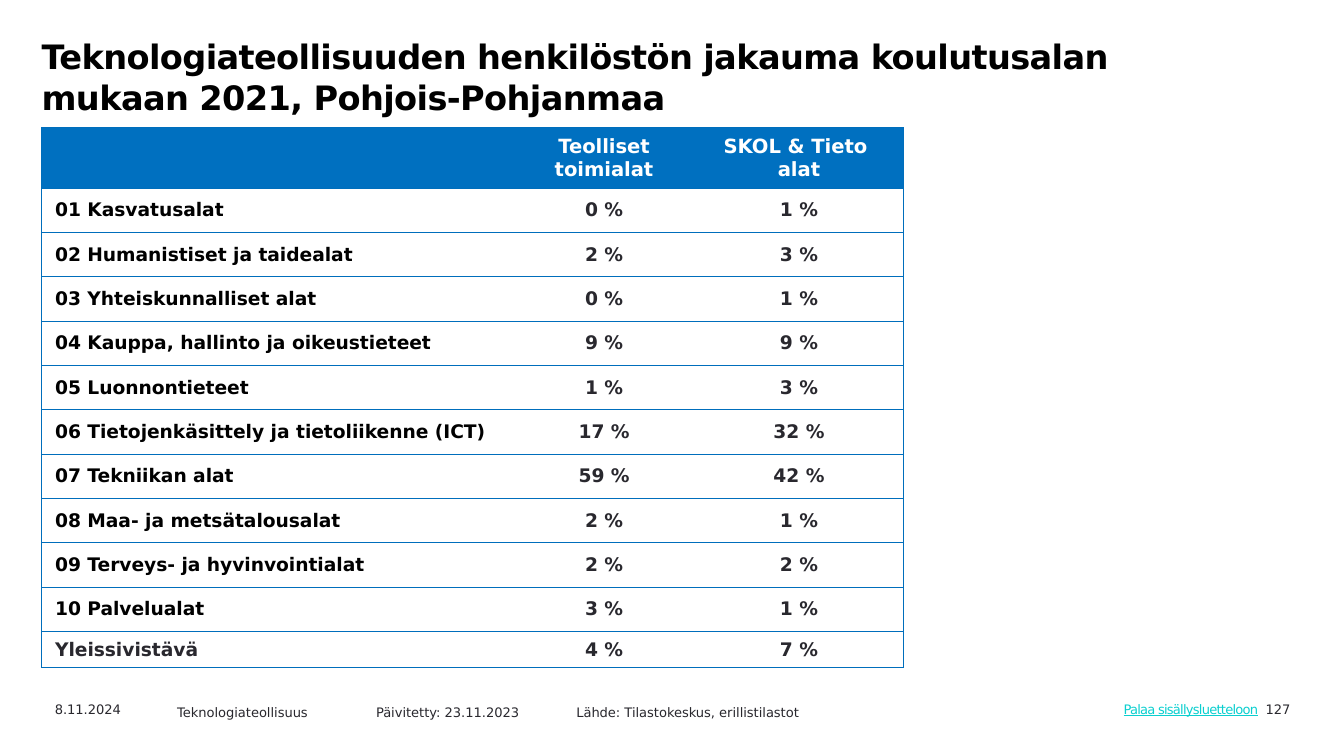
"""Build a slide with a table of staff shares by field of education."""
from dataclasses import dataclass

import pptx
import pptx.dml.color
import pptx.enum.text
import pptx.oxml
import pptx.oxml.ns
import pptx.util

COLUMNS = 1000
SLIDE_WIDTH = pptx.util.Inches(10)
SLIDE_HEIGHT = SLIDE_WIDTH * 9 // 16
UNIT = SLIDE_WIDTH // COLUMNS
ALIGN = pptx.enum.text.PP_ALIGN


@dataclass(frozen=True)
class Theme:
    font: str = "DejaVu Sans"
    ink: str = "29282E"
    black: str = "000000"
    white: str = "FFFFFF"
    header: str = "0070C0"
    border: str = "006EBC"
    link: str = "0ACFCF"
    title_size: float = 18
    header_size: float = 10.5
    body_size: float = 10
    footer_size: float = 7
    border_width: float = 0.75


@dataclass(frozen=True)
class Box:
    left: int
    top: int
    width: int
    height: int

    def emu(self) -> list[int]:
        return [v * UNIT for v in (self.left, self.top, self.width, self.height)]


@dataclass(frozen=True)
class Field:
    name: str
    industry: int
    services: int


THEME = Theme()
COLUMN_WIDTHS = (351, 135, 155)
HEADER_HEIGHT, ROW_HEIGHT, LAST_HEIGHT = 45, 33, 27
HEADINGS = ("", "Teolliset toimialat", "SKOL & Tieto \nalat")
FIELDS = (
    Field("01 Kasvatusalat", 0, 1),
    Field("02 Humanistiset ja taidealat", 2, 3),
    Field("03 Yhteiskunnalliset alat", 0, 1),
    Field("04 Kauppa, hallinto ja oikeustieteet", 9, 9),
    Field("05 Luonnontieteet", 1, 3),
    Field("06 Tietojenkäsittely ja tietoliikenne (ICT)", 17, 32),
    Field("07 Tekniikan alat", 59, 42),
    Field("08 Maa- ja metsätalousalat", 2, 1),
    Field("09 Terveys- ja hyvinvointialat", 2, 2),
    Field("10 Palvelualat", 3, 1),
    Field("Yleissivistävä", 4, 7),
)


def write(tf, text: str, *, size: float, color: str = THEME.ink, bold: bool = False,
          underline: bool = False, align=ALIGN.LEFT, spacing: int = 0,
          tabs: tuple[int, ...] = ()) -> None:
    tf.word_wrap = True
    for i, line in enumerate(text.split("\n")):
        p = tf.paragraphs[0] if i == 0 else tf.add_paragraph()
        p.alignment = align
        if tabs:
            stops = "".join(f'<a:tab pos="{t * UNIT}" algn="l"/>' for t in tabs)
            p._p.get_or_add_pPr().append(pptx.oxml.parse_xml(
                f'<a:tabLst {pptx.oxml.ns.nsdecls("a")}>{stops}</a:tabLst>'))
        r = p.add_run()
        r.text = line
        r.font.name = THEME.font
        r.font.size = pptx.util.Pt(size)
        r.font.bold = bold
        r.font.underline = underline
        r.font.color.rgb = pptx.dml.color.RGBColor.from_string(color)
        if spacing:
            r._r.get_or_add_rPr().set("spc", str(spacing))


def add_text(s, box: Box, text: str, inset: tuple[int, int] = (10, 5), **style) -> None:
    tf = s.shapes.add_textbox(*box.emu()).text_frame
    tf.margin_left = tf.margin_right = inset[0] * UNIT
    tf.margin_top = tf.margin_bottom = inset[1] * UNIT
    write(tf, text, **style)


def set_borders(cell, sides: str) -> None:
    tc_pr = cell._tc.get_or_add_tcPr()
    width = pptx.util.Pt(THEME.border_width)
    for side in "LRTB":
        paint = (f'<a:solidFill><a:srgbClr val="{THEME.border}"/></a:solidFill>'
                 if side in sides else "<a:noFill/>")
        tc_pr.append(pptx.oxml.parse_xml(
            f'<a:ln{side} {pptx.oxml.ns.nsdecls("a")} w="{width}">{paint}</a:ln{side}>'))


def fill_cell(cell, text: str, fill: str, sides: str, **style) -> None:
    set_borders(cell, sides)
    cell.fill.solid()
    cell.fill.fore_color.rgb = pptx.dml.color.RGBColor.from_string(fill)
    cell.vertical_anchor = pptx.enum.text.MSO_ANCHOR.MIDDLE
    if text:
        write(cell.text_frame, text, bold=True, **style)


def add_field_table(s, left: int, top: int) -> None:
    heights = [HEADER_HEIGHT] + [ROW_HEIGHT] * (len(FIELDS) - 1) + [LAST_HEIGHT]
    box = Box(left, top, sum(COLUMN_WIDTHS), sum(heights))
    table = s.shapes.add_table(len(heights), len(COLUMN_WIDTHS), *box.emu()).table
    for column, width in zip(table.columns, COLUMN_WIDTHS):
        column.width = width * UNIT
    for row, height in zip(table.rows, heights):
        row.height = height * UNIT
    sides = ("LTB", "TB", "RTB")
    for c, heading in enumerate(HEADINGS):
        fill_cell(table.cell(0, c), heading, THEME.header, sides[c],
                  size=THEME.header_size, color=THEME.white, align=ALIGN.CENTER)
    for r, field in enumerate(FIELDS, 1):
        texts = (field.name, f"{field.industry} %", f"{field.services} %")
        for c, text in enumerate(texts):
            numbered = c == 0 and r < len(FIELDS)
            fill_cell(table.cell(r, c), text, THEME.white, sides[c],
                      size=THEME.body_size,
                      color=THEME.black if numbered else THEME.ink,
                      align=ALIGN.CENTER if c else ALIGN.LEFT)


def main() -> None:
    prs = pptx.Presentation()
    prs.slide_width, prs.slide_height = SLIDE_WIDTH, SLIDE_HEIGHT
    s = prs.slides.add_slide(prs.slide_layouts[6])
    small = THEME.footer_size
    add_text(s, Box(876, 517, 94, 18), "127", size=small, align=ALIGN.RIGHT)
    add_text(s, Box(31, 517, 100, 18), "8.11.2024", size=small)
    add_field_table(s, 31, 95)
    add_text(s, Box(20, 21, 879, 52),
             "Teknologiateollisuuden henkilöstön jakauma koulutusalan mukaan 2021, "
             "Pohjois-Pohjanmaa", inset=(11, 6), size=THEME.title_size,
             color=THEME.black, bold=True, spacing=-33)
    add_text(s, Box(122, 519, 523, 18),
             "Teknologiateollisuus\tPäivitetty: 23.11.2023\t"
             "Lähde: Tilastokeskus, erillistilastot", size=small, tabs=(148, 297))
    add_text(s, Box(832, 518, 122, 20), "Palaa sisällysluetteloon", inset=(4, 4),
             size=small, color=THEME.link, underline=True, spacing=-40)
    prs.save("out.pptx")


if __name__ == "__main__":
    main()
